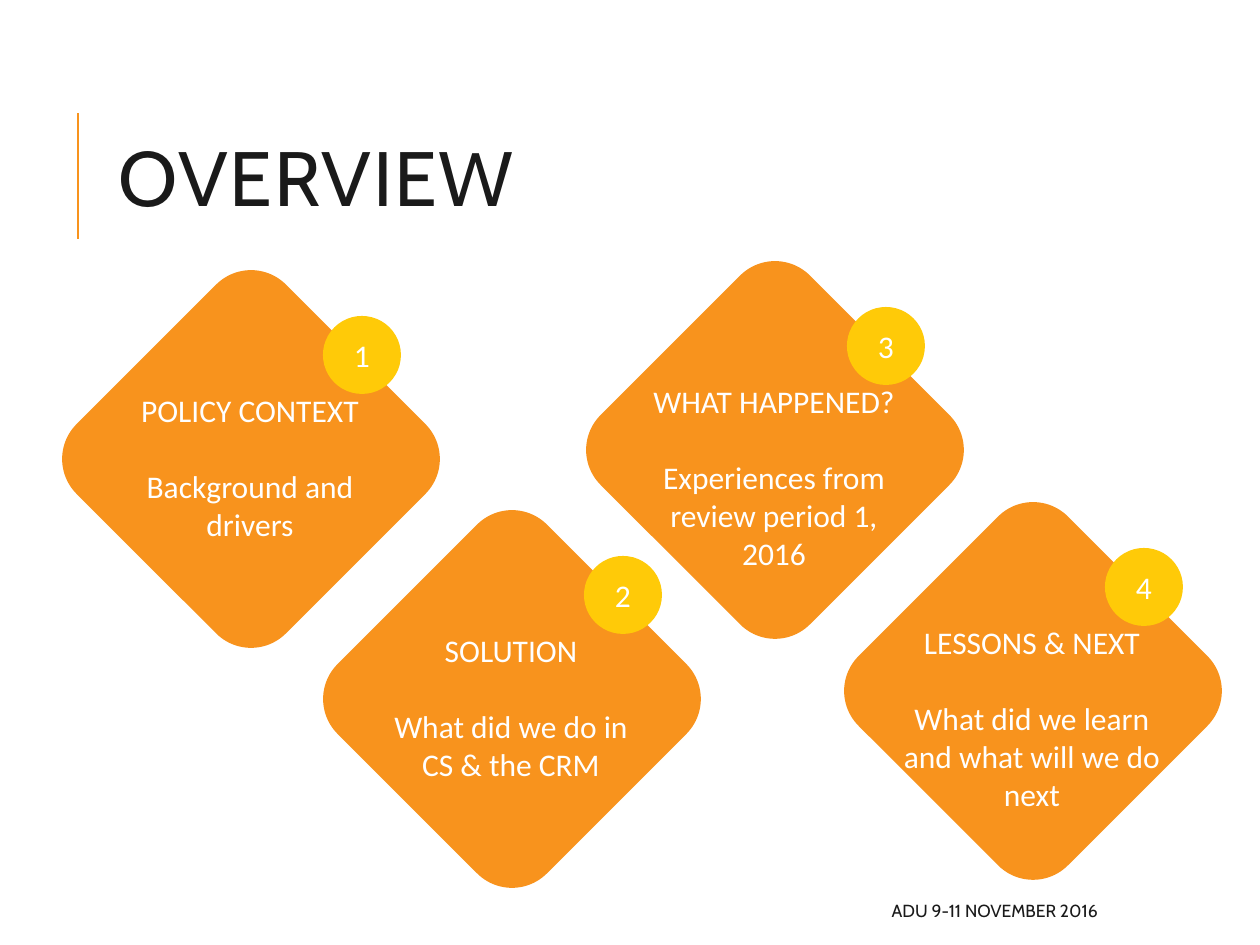
"""Build the overview slide with four numbered diamonds."""
from lxml import etree
from pptx import Presentation
from pptx.dml.color import RGBColor
from pptx.enum.shapes import MSO_CONNECTOR, MSO_SHAPE
from pptx.enum.text import MSO_ANCHOR, MSO_AUTO_SIZE, PP_ALIGN
from pptx.oxml.ns import qn
from pptx.util import Emu, Pt

LINE = MSO_CONNECTOR.STRAIGHT
DIAMOND, BADGE = MSO_SHAPE.ROUNDED_RECTANGLE, MSO_SHAPE.OVAL
TOP, MIDDLE = MSO_ANCHOR.TOP, MSO_ANCHOR.MIDDLE
LEFT, CENTER, RIGHT = PP_ALIGN.LEFT, PP_ALIGN.CENTER, PP_ALIGN.RIGHT
FIXED = MSO_AUTO_SIZE.NONE

EMU_PER_PX = 914400 / 126
COLORS = {"orange": "F8931D", "yellow": "FFCA08", "ink": "1A1A1A", "white": "FFFFFF"}
HEADING_FONT, BODY_FONT = "Cabin", "Calibri"
TILE, BADGE_SIZE = 296, 78

TOPICS = [
    (103, 311, "POLICY CONTEXT", "Background and drivers"),
    (364, 551, "SOLUTION", "What did we do in CS & the CRM"),
    (627, 302, "WHAT HAPPENED?", "Experiences from review period 1, 2016"),
    (885, 543, "LESSONS & NEXT", "What did we learn and what will we do next"),
]


def px(*lengths):
    return [Emu(round(length * EMU_PER_PX)) for length in lengths]


def color(name):
    return RGBColor.from_string(COLORS[name])


class SlideBuilder:
    def __init__(self, deck):
        self.page = deck.slides.add_slide(deck.slide_layouts[5])

    def fill_text(self, shape, lines, size, font, ink, align, anchor=MIDDLE, gap=0):
        frame = shape.text_frame
        frame.text = "\n".join(lines)
        frame.word_wrap = True
        frame.auto_size = FIXED
        frame.vertical_anchor = anchor
        for index, para in enumerate(frame.paragraphs):
            para.alignment = align
            para.space_before = Pt(gap if index else 0)
            para.font.size = Pt(size)
            para.font.name = font
            para.font.color.rgb = color(ink)

    def title(self, text, left, top, width, height):
        box = self.page.shapes.title
        box.left, box.top, box.width, box.height = px(left, top, width, height)
        self.fill_text(box, [text], 44, HEADING_FONT, "ink", LEFT)
        para = box.text_frame.paragraphs[0]
        para.line_spacing = 0.8
        para.runs[0].font._element.set("spc", "100")

    def rule(self, x1, y1, x2, y2):
        line = self.page.shapes.add_connector(LINE, *px(x1, y1, x2, y2))
        line.line.color.rgb = color("orange")
        line.line.width = Pt(1.5)
        etree.SubElement(line._element.spPr, qn("a:effectLst"))

    def shape(self, kind, fill, left, top, size):
        shape = self.page.shapes.add_shape(kind, *px(left, top, size, size))
        shape.shadow.inherit = False
        shape.fill.solid()
        shape.fill.fore_color.rgb = color(fill)
        shape.line.fill.background()
        return shape

    def text(self, lines, left, top, width, height, *style, **options):
        box = self.page.shapes.add_textbox(*px(left, top, width, height))
        self.fill_text(box, lines, *style, **options)

    def topic(self, number, left, top, heading, detail):
        self.shape(DIAMOND, "orange", left, top, TILE).rotation = 45
        badge = self.shape(BADGE, "yellow", left + 220, top + 5, BADGE_SIZE)
        self.fill_text(badge, [str(number)], 18, BODY_FONT, "white", CENTER)
        self.text([heading, detail], left + 5, top + 74, 284, 204,
                  18, BODY_FONT, "white", CENTER, anchor=TOP, gap=22)


def main():
    deck = Presentation()
    deck.slide_width, deck.slide_height = px(1260, 945)
    builder = SlideBuilder(deck)
    builder.rule(78, 239, 78, 113)
    builder.title("OVERVIEW", 106, 81, 1004, 207)
    for number, topic in enumerate(TOPICS, start=1):
        builder.topic(number, *topic)
    builder.text(["ADU 9-11 NOVEMBER 2016"], 500, 892, 610, 38,
                 10, HEADING_FONT, "ink", RIGHT)
    deck.save("out.pptx")


if __name__ == "__main__":
    main()
